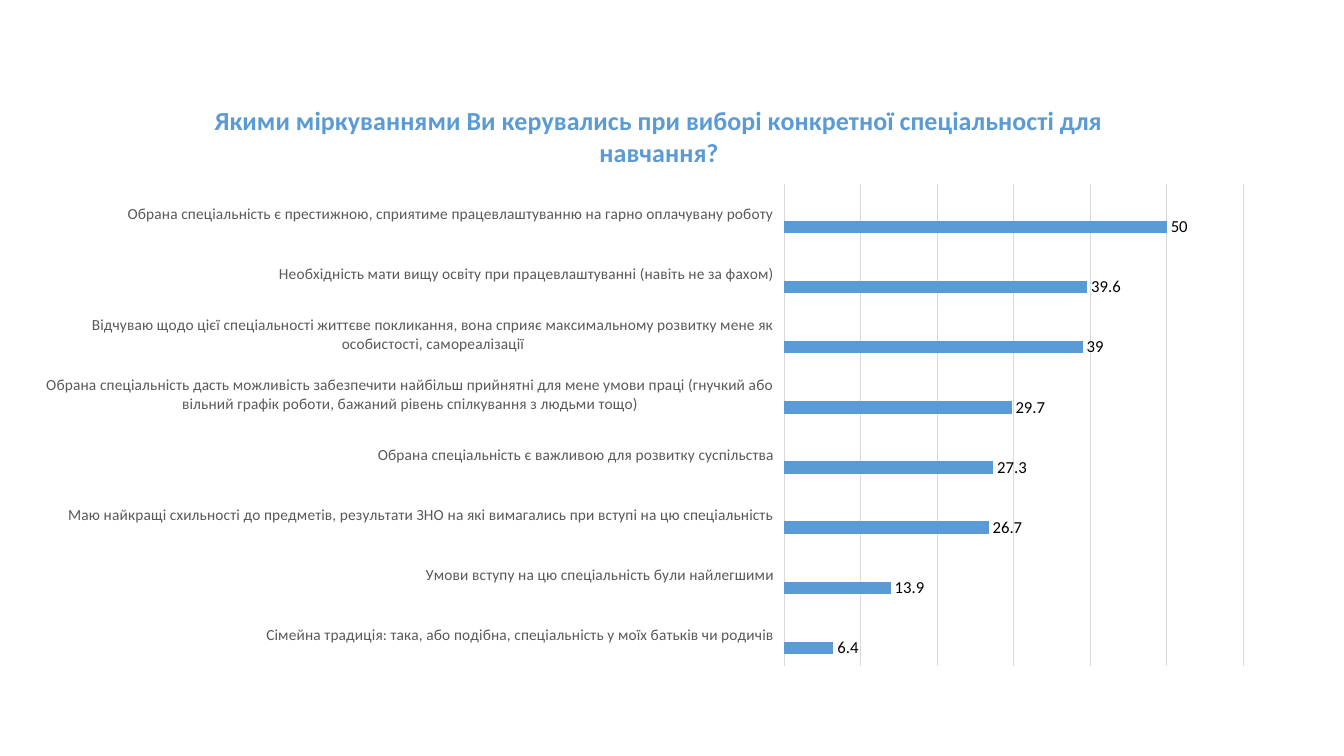
from lxml.etree import SubElement
from pptx import Presentation
from pptx.chart.data import CategoryChartData as ChartData
from pptx.dml.color import RGBColor
from pptx.enum.chart import XL_CHART_TYPE as ChartType
from pptx.enum.chart import XL_LABEL_POSITION as LabelPos
from pptx.enum.chart import XL_TICK_LABEL_POSITION as TickLabelPos
from pptx.enum.chart import XL_TICK_MARK as TickMark
from pptx.oxml.ns import qn
from pptx.util import Pt

FONT = "Calibri"
BLUE, ORANGE, GREY = "5B9BD5", "ED7D31", "A5A5A5"
BLACK, DARK, TEXT, GRID = "000000", "404040", "595959", "D9D9D9"

QUESTION = "Якими міркуваннями Ви керувались при виборі конкретної спеціальності для навчання?"

# Reasons from the bottom bar to the top one, with their share
REASONS = {
    "Сімейна традиція: така, або подібна, спеціальність у моїх батьків чи родичів": 6.4,
    "Умови вступу на цю спеціальність були найлегшими": 13.9,
    "Маю найкращі схильності до предметів, результати ЗНО на які вимагались "
    "при вступі на цю спеціальність": 26.7,
    "Обрана спеціальність є важливою для розвитку суспільства": 27.3,
    "Обрана спеціальність дасть можливість забезпечити найбільш прийнятні для мене "
    "умови праці (гнучкий або вільний графік роботи, бажаний рівень спілкування "
    "з людьми тощо)": 29.7,
    "Відчуваю щодо цієї спеціальності життєве покликання, вона сприяє максимальному "
    "розвитку мене як особистості, самореалізації": 39,
    "Необхідність мати вищу освіту при працевлаштуванні (навіть не за фахом)": 39.6,
    "Обрана спеціальність є престижною, сприятиме працевлаштуванню "
    "на гарно оплачувану роботу": 50,
}


def rgb(value):
    return RGBColor.from_string(value)


def style_font(font, size, color, bold=False):
    font.name, font.size, font.bold = FONT, Pt(size), bold
    font.color.rgb = rgb(color)


def style_line(line, color, width=0.75):
    line.color.rgb = rgb(color)
    line.width = Pt(width)


def write_text(frame, text, **font_format):
    run = frame.paragraphs[0].add_run()
    run.text = text
    style_font(run.font, **font_format)


def place_plot(chart, **fractions):
    """Fix the inner plot area as fractions of the chart frame."""
    plot_area = chart._chartSpace.chart.plotArea
    for old in plot_area.findall(qn("c:layout")):
        plot_area.remove(old)
    layout = SubElement(plot_area, qn("c:layout"))
    plot_area.insert(0, layout)
    manual = SubElement(layout, qn("c:manualLayout"))
    settings = {"layoutTarget": "inner", "xMode": "edge", "yMode": "edge", **fractions}
    for tag, value in settings.items():
        SubElement(manual, qn(f"c:{tag}")).set("val", str(value))


def style_axes(chart):
    reasons = chart.category_axis
    reasons.major_tick_mark = reasons.minor_tick_mark = TickMark.NONE
    reasons.tick_label_position = TickLabelPos.LOW
    reasons.has_major_gridlines = False
    style_font(reasons.tick_labels.font, 11, TEXT)
    style_line(reasons.format.line, GRID)

    share = chart.value_axis
    share.minimum_scale, share.maximum_scale, share.major_unit = 0, 60, 10
    share.has_major_gridlines = True
    style_line(share.major_gridlines.format.line, GRID)
    share.visible = False


def style_series(series, color, label_color):
    series.format.fill.solid()
    series.format.fill.fore_color.rgb = rgb(color)
    series.invert_if_negative = False
    labels = series.data_labels
    labels.show_value = True
    labels.position = LabelPos.OUTSIDE_END
    style_font(labels.font, 12, label_color)


def add_bar_chart(slide, left, top, width, height):
    data = ChartData()
    data.categories = list(REASONS)
    data.add_series("Series 1", list(REASONS.values()))
    # Two empty series keep their room beside each bar
    for name in ("Series 2", "Series 3"):
        data.add_series(name, [None] * len(REASONS))
    chart = slide.shapes.add_chart(
        ChartType.BAR_CLUSTERED, Pt(left), Pt(top), Pt(width), Pt(height), data
    ).chart
    style_font(chart.font, 10, BLACK)
    chart.has_legend = False
    return chart


def main():
    deck = Presentation()
    deck.slide_width, deck.slide_height = Pt(960), Pt(540)
    slide = deck.slides.add_slide(deck.slide_layouts[6])

    # Chart and its plot area
    chart = add_bar_chart(slide, 33, 57, 872.5, 427)
    place_plot(chart, x=0.603, y=0.175, w=0.377, h=0.805)
    style_axes(chart)

    # Question as the chart title
    chart.has_title = True
    chart.chart_title.include_in_layout = False
    write_text(chart.chart_title.text_frame, QUESTION, size=18.6, color=BLUE, bold=True)

    # Bars and value labels
    plot = chart.plots[0]
    plot.gap_width = 182
    plot.vary_by_categories = False
    colors = ((BLUE, BLACK), (ORANGE, DARK), (GREY, DARK))
    for series, (color, label_color) in zip(plot.series, colors):
        style_series(series, color, label_color)

    deck.save("out.pptx")


if __name__ == "__main__":
    main()
